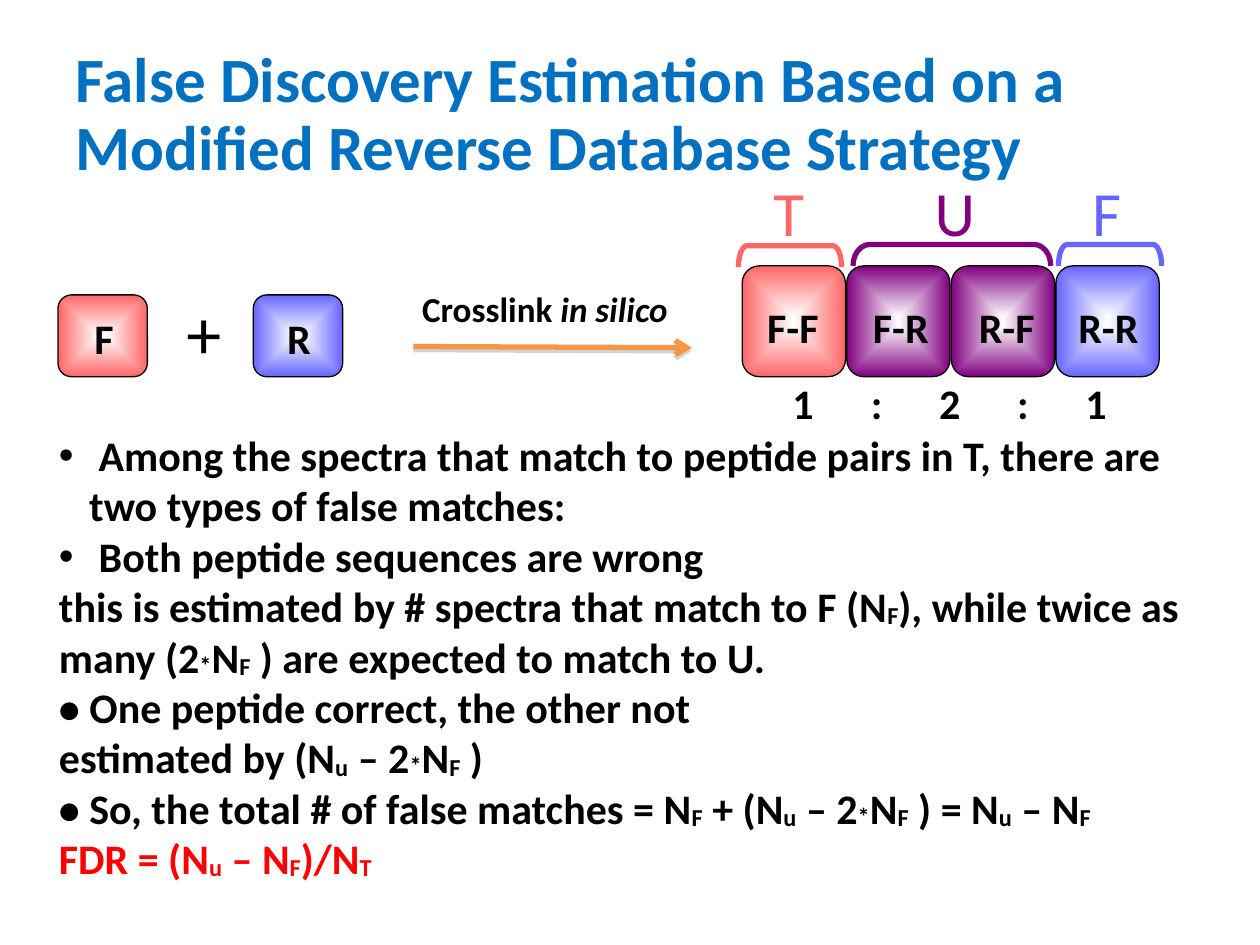
from lxml import etree
from pptx import Presentation
from pptx.dml.color import RGBColor
from pptx.enum.shapes import MSO_CONNECTOR as CONN, MSO_SHAPE as SHAPE
from pptx.enum.text import MSO_ANCHOR as ANCHOR, PP_ALIGN as ALIGN
from pptx.oxml import parse_xml
from pptx.oxml.ns import nsdecls, qn
from pptx.util import Inches, Pt

BLACK = RGBColor(0x00, 0x00, 0x00)
RED = RGBColor(0xFF, 0x00, 0x00)
TITLE_BLUE = RGBColor(0x00, 0x70, 0xC0)
FORWARD = RGBColor(0xFF, 0x66, 0x66)
REVERSE = RGBColor(0x66, 0x66, 0xFF)
MIXED = RGBColor(0x80, 0x00, 0x80)
ORANGE = RGBColor(0xF7, 0x96, 0x46)

TITLE = "False Discovery Estimation Based on a Modified Reverse Database Strategy"
BULLETS = [
    " Among the spectra that match to peptide pairs in T, there are two types of false matches:",
    " Both peptide sequences are wrong",
]
ESTIMATES = [
    "this is estimated by # spectra that match to F (N|F|), while twice as many (2|*|N|F| ) are expected to match to U.",
    "• One peptide correct, the other not",
    "estimated by (N|u| – 2|*|N|F| )",
    "• So, the total # of false matches = N|F| + (N|u| – 2|*|N|F| ) = N|u| – N|F",
]
FDR = "FDR = (N|u| – N|F|)/N|T"


def add_run(p, text, size=24, color=BLACK, bold=True, italic=None):
    """Append a formatted run to a paragraph."""
    r = p.add_run()
    r.text = text
    r.font.name = "Calibri"
    r.font.size = Pt(size)
    r.font.bold = bold
    r.font.italic = italic
    r.font.color.rgb = color
    return r


def add_formula(p, text, color=BLACK):
    """Add runs, lowering every second part between the bars."""
    for i, part in enumerate(text.split("|")):
        r = add_run(p, part, color=color)
        if i % 2:
            r.font._element.set("baseline", "-2000" if part == "*" else "-5000")


def add_box(s, x, y, w, h, wrap=True):
    """Add an empty text box and return its text frame."""
    tf = s.shapes.add_textbox(Inches(x), Inches(y), Inches(w), Inches(h)).text_frame
    tf.word_wrap = wrap
    return tf


def add_label(s, text, x, y, w, h=0.5, **style):
    """Add a one-line label."""
    add_run(add_box(s, x, y, w, h, False).paragraphs[0], text, **style)


def add_tile(s, x, y, w, h, color):
    """Add a rounded tile shaded from a white centre to its colour."""
    sp = s.shapes.add_shape(SHAPE.ROUNDED_RECTANGLE, Inches(x), Inches(y), Inches(w), Inches(h))
    sp.shadow.inherit = False
    sp.line.color.rgb = BLACK
    sp.line.width = Pt(0.75)
    sp._element.spPr.find(qn("a:prstGeom")).addnext(parse_xml(
        f'<a:gradFill {nsdecls("a")} rotWithShape="1"><a:gsLst>'
        '<a:gs pos="0"><a:srgbClr val="FFFFFF"/></a:gs>'
        f'<a:gs pos="100000"><a:srgbClr val="{color}"/></a:gs></a:gsLst>'
        '<a:path path="shape"><a:fillToRect l="50000" t="50000" r="50000" b="50000"/></a:path>'
        '</a:gradFill>'))


def add_bracket(s, x, y, length, color, adj):
    """Add an upward bracket spanning the given length."""
    depth = 0.17
    left, top = x + (length - depth) / 2, y - (length - depth) / 2
    sp = s.shapes.add_shape(SHAPE.RIGHT_BRACKET, Inches(left), Inches(top), Inches(depth), Inches(length))
    sp.rotation = 270
    sp.adjustments[0] = adj
    sp.shadow.inherit = False
    sp.fill.background()
    sp.line.color.rgb = color
    sp.line.width = Pt(3)


def add_arrow(s, x1, y1, x2, y2):
    """Add the crosslink arrow with a soft drop shadow."""
    c = s.shapes.add_connector(CONN.STRAIGHT, Inches(x1), Inches(y1), Inches(x2), Inches(y2))
    c.line.color.rgb = ORANGE
    c.line.width = Pt(3)
    etree.SubElement(c.line._get_or_add_ln(), qn("a:tailEnd"), type="arrow")
    c._element.spPr.append(parse_xml(
        f'<a:effectLst {nsdecls("a")}><a:outerShdw dist="22860" dir="5400000" rotWithShape="0">'
        '<a:srgbClr val="808080"><a:alpha val="35000"/></a:srgbClr></a:outerShdw></a:effectLst>'))


def add_ratio(s):
    """Add the 1:2:1 ratio on evenly spaced centred tabs."""
    p = add_box(s, 6.19, 2.95, 2.85, 0.5).paragraphs[0]
    add_run(p, "1\t:\t2\t:\t1")
    tabs = etree.SubElement(p._p.get_or_add_pPr(), qn("a:tabLst"))
    for i in range(4):
        etree.SubElement(tabs, qn("a:tab"), pos=str(Inches(0.67 + 0.58 * i)), algn="ctr")


def add_explanation(s):
    """Add the bulleted reasoning that ends in the FDR formula."""
    tf = add_box(s, 0.37, 3.36, 9.26, 3.69)
    for i, text in enumerate(BULLETS + ESTIMATES + [FDR]):
        p = tf.add_paragraph() if i else tf.paragraphs[0]
        add_formula(p, text, RED if text == FDR else BLACK)
        if text in BULLETS:
            pPr = p._p.get_or_add_pPr()
            pPr.set("marL", str(Inches(0.24)))
            pPr.set("indent", str(Inches(-0.24)))
            etree.SubElement(pPr, qn("a:buFont"), typeface="Arial")
            etree.SubElement(pPr, qn("a:buChar"), char="•")


def add_title(s):
    """Place and format the title placeholder."""
    sp = s.shapes.title
    sp.left, sp.top, sp.width, sp.height = Inches(0.5), Inches(0.3), Inches(9), Inches(1.25)
    sp.text_frame.vertical_anchor = ANCHOR.MIDDLE
    p = sp.text_frame.paragraphs[0]
    p.alignment = ALIGN.LEFT
    p.line_spacing = 0.9
    add_run(p, TITLE, 36, TITLE_BLUE)


def main():
    """Build and save the slide."""
    prs = Presentation()
    prs.slide_width, prs.slide_height = Inches(10), Inches(7.5)
    s = prs.slides.add_slide(prs.slide_layouts[5])
    add_title(s)

    for text, x, label_x, w, color in [("F", 0.46, 0.65, 0.35, FORWARD), ("R", 2.01, 2.18, 0.39, REVERSE)]:
        add_tile(s, x, 2.34, 0.71, 0.65, color)
        add_label(s, text, label_x, 2.43, w)
    add_label(s, "+", 1.38, 2.25, 0.48, 0.77, size=40, bold=False)

    add_arrow(s, 3.28, 2.75, 5.49, 2.76)
    p = add_box(s, 3.18, 2.23, 2.29, 0.43).paragraphs[0]
    p.alignment = ALIGN.CENTER
    add_run(p, "Crosslink ", 20)
    add_run(p, "in silico", 20, italic=True)

    pairs = [("F-F", 5.99, 0.61, FORWARD), ("F-R", 6.83, 0.64, MIXED),
             ("R-F", 7.67, 0.64, MIXED), ("R-R", 8.46, 0.68, REVERSE)]
    for i, (text, x, w, color) in enumerate(pairs):
        add_tile(s, 5.89 + 0.83 * i, 2.11, 0.82, 0.88, color)
        add_label(s, text, x, 2.34, w)

    groups = [("T", 6.04, 0.44, 5.86, 1.95, 0.82, 0.41, FORWARD),
              ("U", 7.32, 0.52, 6.77, 1.94, 1.57, 0.785, MIXED),
              ("F", 8.57, 0.43, 8.4, 1.94, 0.82, 0.41, REVERSE)]
    for text, x, w, left, top, length, adj, color in groups:
        add_bracket(s, left, top, length, color, adj)
        add_label(s, text, x, 1.33, w, 0.7, size=36, color=color, bold=False)

    add_ratio(s)
    add_explanation(s)
    prs.save("out.pptx")


if __name__ == "__main__":
    main()
